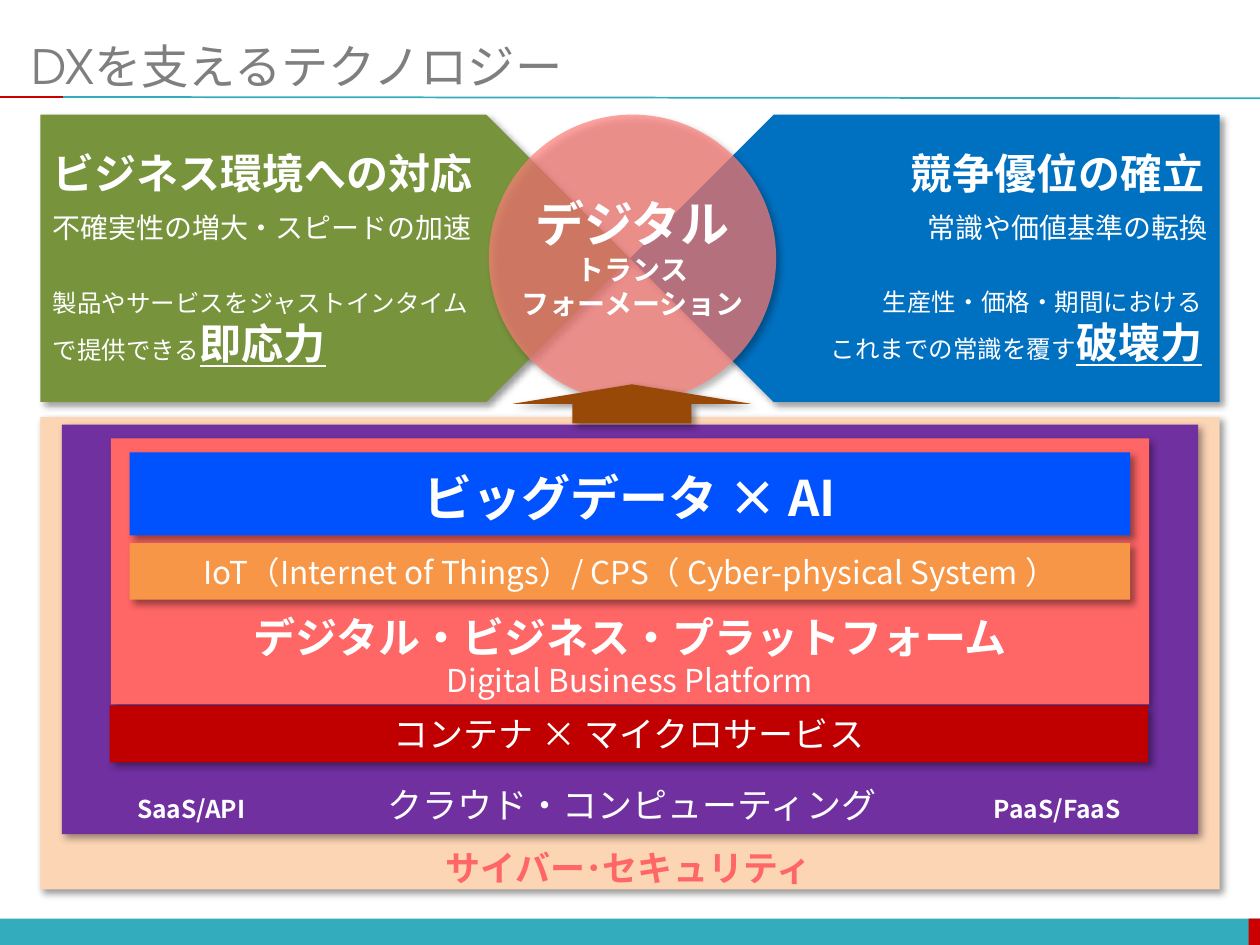
from dataclasses import dataclass

from lxml.etree import SubElement
from pptx import Presentation
from pptx.dml.color import RGBColor
from pptx.enum.shapes import MSO_CONNECTOR as Connector, MSO_SHAPE as Shape
from pptx.enum.text import MSO_ANCHOR as Anchor, MSO_AUTO_SIZE as AutoSize, PP_ALIGN as Align
from pptx.oxml.ns import qn
from pptx.util import Inches, Pt


@dataclass(frozen=True)
class Theme:
    font: str = "Noto Sans CJK JP"
    title_font: str = "TeX Gyre Adventor"
    white: str = "FFFFFF"
    gray: str = "7F7F7F"
    teal: str = "33ACBD"
    red: str = "CC0000"
    peach: str = "FCD5B5"
    purple: str = "7030A0"
    green: str = "77933C"
    blue: str = "0070C0"
    pink: str = "FF7E79"
    brown: str = "984807"
    coral: str = "FF6666"
    bright_blue: str = "0052FF"
    orange: str = "F79646"
    dark_red: str = "C00000"
    hero: int = 28
    title: int = 27
    heading: int = 24
    layer: int = 20
    detail: int = 18
    body: int = 16
    small: int = 14


THEME = Theme()


@dataclass(frozen=True)
class Span:
    text: str
    size: int
    bold: bool = False
    underline: bool = False
    color: str = THEME.white


@dataclass(frozen=True)
class Block:
    """A filled shape, with centred text if it has any."""
    at: tuple[float, float, float, float]
    color: str
    kind: Shape = Shape.RECTANGLE
    span: Span | None = None
    rotation: int = 0
    opacity: int = 100
    shadow: bool = True


@dataclass(frozen=True)
class Label:
    """A text box; each line is a tuple of spans."""
    at: tuple[float, float, float, float]
    lines: tuple[tuple[Span, ...], ...]
    align: Align = Align.LEFT
    wrap: bool = False


def write_lines(frame, lines: tuple[tuple[Span, ...], ...], align: Align) -> None:
    for index, spans in enumerate(lines):
        para = frame.paragraphs[0] if index == 0 else frame.add_paragraph()
        para.alignment = align
        for span in spans:
            run = para.add_run()
            run.text = span.text
            style_run(run, span, THEME.font)


def style_run(run, span: Span, latin: str) -> None:
    font = run.font
    font.size, font.bold, font.underline = Pt(span.size), span.bold, span.underline
    font.color.rgb = RGBColor.from_string(span.color)
    font.name = latin
    SubElement(font._element, qn("a:ea"), typeface=THEME.font)


def add_shadow(shape) -> None:
    effects = shape._element.spPr.find(qn("a:effectLst"))
    outer = SubElement(effects, qn("a:outerShdw"), blurRad=str(Pt(4)), dist=str(Pt(3)),
                       dir=str(45 * 60000), algn="tl", rotWithShape="0")
    color = SubElement(outer, qn("a:srgbClr"), val="000000")
    SubElement(color, qn("a:alpha"), val="40000")


def draw_block(slide, block: Block) -> None:
    shape = slide.shapes.add_shape(block.kind, *map(Inches, block.at))
    shape.rotation = block.rotation
    shape.fill.solid()
    shape.fill.fore_color.rgb = RGBColor.from_string(block.color)
    shape.line.fill.background()
    shape.shadow.inherit = False
    if block.shadow:
        add_shadow(shape)
    if block.opacity < 100:
        color = shape._element.spPr.find(qn("a:solidFill"))[0]
        SubElement(color, qn("a:alpha"), val=str(block.opacity * 1000))
    if block.span:
        shape.text_frame.vertical_anchor = Anchor.MIDDLE
        write_lines(shape.text_frame, ((block.span,),), Align.CENTER)


def draw_label(slide, label: Label) -> None:
    frame = slide.shapes.add_textbox(*map(Inches, label.at)).text_frame
    frame.word_wrap = label.wrap
    frame.auto_size = AutoSize.SHAPE_TO_FIT_TEXT
    write_lines(frame, label.lines, label.align)


def draw_rule(slide, start: tuple[float, float], end: tuple[float, float], color: str) -> None:
    rule = slide.shapes.add_connector(Connector.STRAIGHT, *map(Inches, start + end))
    rule.line.color.rgb = RGBColor.from_string(color)
    rule.line.width = Pt(1)
    SubElement(rule._element.spPr, qn("a:effectLst"))


def draw_title(slide, text: str) -> None:
    title = slide.shapes.title
    title.left, title.top, title.width, title.height = map(Inches, (0.25, 0.29, 9.51, 0.46))
    frame = title.text_frame
    frame.text = text
    frame.auto_size = AutoSize.NONE
    frame.vertical_anchor = Anchor.MIDDLE
    frame.margin_left = frame.margin_right = 0
    para = frame.paragraphs[0]
    para.alignment = Align.LEFT
    style_run(para.runs[0], Span(text, THEME.title, color=THEME.gray), THEME.title_font)


def strong(text: str, size: int, color: str = THEME.white) -> Span:
    return Span(text, size, bold=True, color=color)


def power(text: str) -> Span:
    return Span(text, THEME.heading, bold=True, underline=True)


# Everything below the title, from back to front
PARTS = (
    # Footer band
    Block((0, 7.29, 10, 0.22), THEME.teal, shadow=False),
    Block((9.91, 7.29, 0.1, 0.22), THEME.red, shadow=False),
    # Outer layers: security and cloud
    Block((0.32, 3.31, 9.36, 3.75), THEME.peach),
    Block((0.49, 3.37, 9.02, 3.25), THEME.purple),
    # Two goals pointing at each other
    Block((0.32, 0.91, 4.68, 2.28), THEME.green, Shape.PENTAGON),
    Block((5, 0.91, 4.68, 2.28), THEME.blue, Shape.PENTAGON, rotation=180),
    Label((0.32, 1.12, 3.57, 0.5), ((strong("ビジネス環境への対応", THEME.heading),),)),
    Label((7.1, 1.12, 2.56, 0.5), ((strong("競争優位の確立", THEME.heading),),), Align.RIGHT),
    Label((0.32, 1.62, 3.57, 0.37), ((Span("不確実性の増大・スピードの加速", THEME.body),),)),
    Label((0.32, 2.24, 3.58, 0.74),
          ((Span("製品やサービスをジャストインタイムで提供できる", THEME.small), power("即応力")),),
          wrap=True),
    Label((7.23, 1.62, 2.45, 0.37), ((Span("常識や価値基準の転換", THEME.body),),), Align.RIGHT),
    Label((6.19, 2.23, 3.45, 0.74),
          ((Span("生産性・価格・期間における", THEME.small),),
           (Span("これまでの常識を覆す", THEME.small), power("破壊力"))),
          Align.RIGHT, wrap=True),
    # Digital transformation
    Block((3.88, 0.91, 2.28, 2.28), THEME.pink, Shape.OVAL, opacity=71),
    Label((4.02, 1.49, 2, 1.11),
          ((strong("デジタル", THEME.hero),),
           (strong("トランス", THEME.body),),
           (strong("フォーメーション", THEME.body),)),
          Align.CENTER),
    Block((4.07, 3.05, 1.89, 0.31), THEME.brown, Shape.UP_ARROW),
    # Inner layers of the platform
    Block((0.88, 3.48, 8.24, 2.11), THEME.coral),
    Block((1.03, 3.59, 7.94, 0.66), THEME.bright_blue),
    Block((1.03, 4.31, 7.94, 0.45), THEME.orange,
          span=Span("IoT（Internet of Things）/ CPS（ Cyber-physical System ）", THEME.detail)),
    Block((0.87, 5.6, 8.24, 0.45), THEME.dark_red,
          span=Span("コンテナ × マイクロサービス", THEME.layer)),
    # Layer names
    Label((3.44, 6.67, 3.15, 0.44),
          ((strong("サイバー･セキュリティ", THEME.layer, THEME.coral),),)),
    Label((1.66, 4.8, 6.68, 0.81),
          ((strong("デジタル・ビジネス・プラットフォーム", THEME.heading),),
           (Span("Digital Business Platform", THEME.detail),)),
          Align.CENTER, wrap=True),
    Label((3.18, 3.66, 3.64, 0.57), ((strong("ビッグデータ × AI", THEME.hero),),), Align.CENTER),
    Label((0.99, 6.25, 1.21, 0.34), ((strong("SaaS/API", THEME.small),),)),
    Label((7.79, 6.25, 1.33, 0.34), ((strong("PaaS/FaaS", THEME.small),),)),
    Label((2.95, 6.17, 4.13, 0.44),
          ((Span("クラウド・コンピューティング", THEME.layer),),), Align.CENTER),
)


def main() -> None:
    deck = Presentation()
    deck.slide_width, deck.slide_height = Inches(10), Inches(7.5)
    page = deck.slides.add_slide(deck.slide_layouts[5])
    draw_title(page, "DXを支えるテクノロジー")
    draw_rule(page, (0.5, 0.77), (10, 0.78), THEME.teal)
    draw_rule(page, (0, 0.77), (0.5, 0.77), THEME.red)
    for part in PARTS:
        if isinstance(part, Block):
            draw_block(page, part)
        else:
            draw_label(page, part)
    deck.save("out.pptx")


if __name__ == "__main__":
    main()
